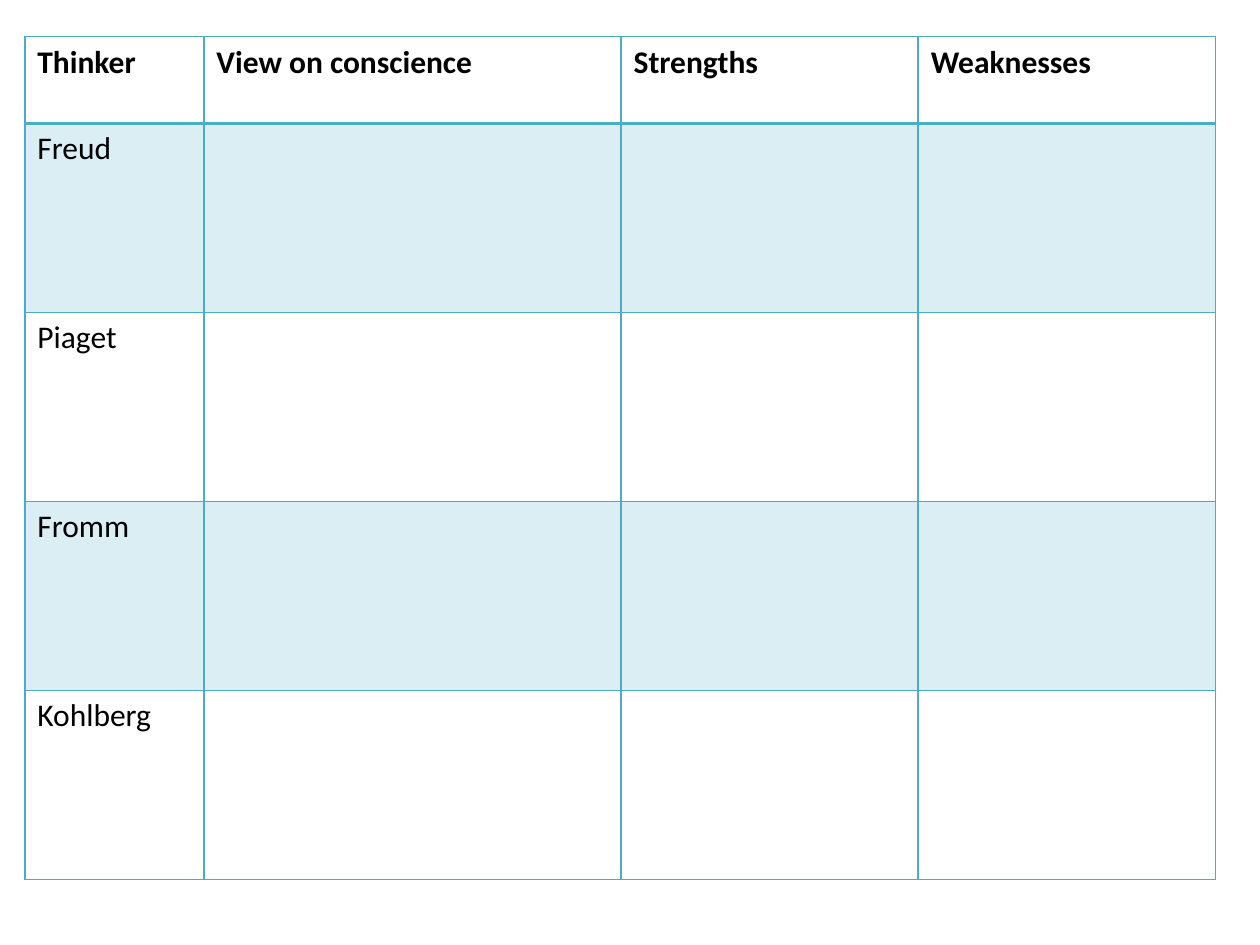
from lxml import etree
from pptx import Presentation
from pptx import util as u
from pptx.dml.color import RGBColor
from pptx.oxml.ns import qn

TEAL = "4BACC6"
HEADINGS = ["Thinker", "View on conscience", "Strengths", "Weaknesses"]
THINKERS = ["Freud", "Piaget", "Fromm", "Kohlberg"]
COLUMN_WIDTHS = [3.61, 8.41, 5.99, 5.99]
ROW_HEIGHTS = [1.75] + [3.81] * len(THINKERS)


def colour(value):
    return RGBColor.from_string(value)


def add_border(cell, side, width):
    line = etree.SubElement(cell._tc.get_or_add_tcPr(), qn(f"a:ln{side}"), w=str(u.Pt(width)))
    fill = etree.SubElement(line, qn("a:solidFill"))
    etree.SubElement(fill, qn("a:srgbClr"), val=TEAL)


deck = Presentation()
deck.slide_width, deck.slide_height = u.Cm(25.4), u.Cm(19.05)
page = deck.slides.add_slide(deck.slide_layouts[6])

frame = page.shapes.add_table(
    len(ROW_HEIGHTS), len(COLUMN_WIDTHS), u.Cm(0.5), u.Cm(0.74),
    u.Cm(sum(COLUMN_WIDTHS)), u.Cm(sum(ROW_HEIGHTS)))
table = frame.table
table.horz_banding = False
for column, width in zip(table.columns, COLUMN_WIDTHS):
    column.width = u.Cm(width)
for row, height in zip(table.rows, ROW_HEIGHTS):
    row.height = u.Cm(height)

contents = [HEADINGS] + [[name, "", "", ""] for name in THINKERS]
for r, words in enumerate(contents):
    for c, word in enumerate(words):
        cell = table.cell(r, c)
        for side in "LRTB":
            under_header = (r, side) in [(0, "B"), (1, "T")]
            add_border(cell, side, 2 if under_header else 1)
        if r % 2:
            cell.fill.solid()
            cell.fill.fore_color.rgb = colour(TEAL)
            tint = cell._tc.tcPr.find(qn("a:solidFill")).find(qn("a:srgbClr"))
            etree.SubElement(tint, qn("a:alpha"), val="20000")
        else:
            cell.fill.background()
        if word:
            span = cell.text_frame.paragraphs[0].add_run()
            span.text = word
            formats = {"name": "Calibri", "size": u.Pt(18), "bold": r == 0}
            for key, value in formats.items():
                setattr(span.font, key, value)
            span.font.color.rgb = colour("000000")

deck.save("out.pptx")
